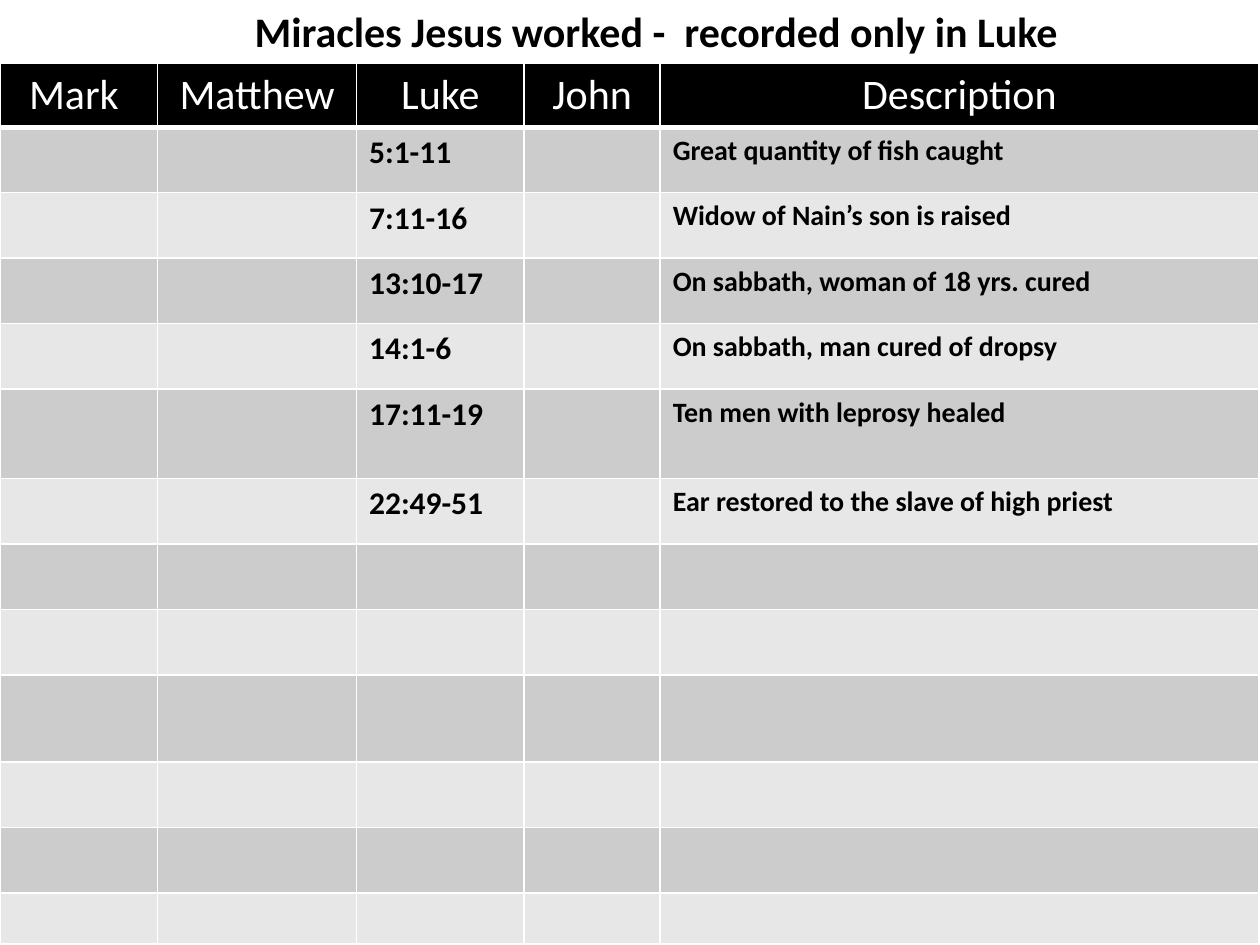
from dataclasses import dataclass

from lxml.etree import SubElement
from pptx import Presentation
from pptx.dml.color import RGBColor
from pptx.enum.text import MSO_ANCHOR, MSO_AUTO_SIZE, PP_ALIGN
from pptx.oxml.ns import qn
from pptx.util import Inches, Pt

FONT = "Calibri"
BLACK, WHITE = "000000", "FFFFFF"
BANDS = ("E7E7E7", "CCCCCC")
HEADS = ("Mark ", "Matthew", "Luke", "John", "Description")
WIDTHS = (1.25, 1.58, 1.33, 1.08, 4.75)
HEIGHTS = (0.51, *[0.52] * 4, 0.71, *[0.52] * 3, 0.69, 0.52, 0.52, 0.4)


@dataclass
class Event:
    verse: str
    text: str


EVENTS = (
    Event("5:1-11", "Great quantity of fish caught"),
    Event("7:11-16", "Widow of Nain’s son is raised"),
    Event("13:10-17", "On sabbath, woman of 18 yrs. cured"),
    Event("14:1-6", "On sabbath, man cured of dropsy"),
    Event("17:11-19", "Ten men with leprosy healed"),
    Event("22:49-51", "Ear restored to the slave of high priest"),
)


def color(code: str) -> RGBColor:
    return RGBColor.from_string(code)


def write(frame, text: str, size: int, code: str = BLACK, bold: bool = True,
          align=PP_ALIGN.LEFT) -> None:
    para = frame.paragraphs[0]
    para.alignment = align
    run = para.add_run()
    run.text = text
    font = run.font
    font.name, font.size, font.bold = FONT, Pt(size), bold
    font.color.rgb = color(code)


def style(cell, code: str, base: int) -> None:
    props = cell._tc.get_or_add_tcPr()
    for side, width in (("L", 1), ("R", 1), ("T", 1), ("B", base)):
        line = SubElement(props, qn(f"a:ln{side}"), w=str(Pt(width)))
        fill = SubElement(line, qn("a:solidFill"))
        SubElement(fill, qn("a:srgbClr"), val=WHITE)
    cell.fill.solid()
    cell.fill.fore_color.rgb = color(code)


def add_grid(slide) -> None:
    grid = slide.shapes.add_table(len(HEIGHTS), len(WIDTHS), Inches(0), Inches(0.5),
                                  Inches(sum(WIDTHS)), Inches(sum(HEIGHTS))).table
    for col, width in zip(grid.columns, WIDTHS):
        col.width = Inches(width)
    for num, (row, height) in enumerate(zip(grid.rows, HEIGHTS)):
        row.height = Inches(height)
        for cell in row.cells:
            style(cell, BANDS[num % 2] if num else BLACK, 1 if num else 3)
    for col, head in enumerate(HEADS):
        write(grid.cell(0, col).text_frame, head, 24, WHITE, False, PP_ALIGN.CENTER)
    for num, event in enumerate(EVENTS, 1):
        write(grid.cell(num, 2).text_frame, event.verse, 18)
        write(grid.cell(num, 4).text_frame, event.text, 16)


def add_title(slide) -> None:
    title = slide.shapes.title
    title.left, title.top = Inches(1.92), Inches(-0.01)
    title.width, title.height = Inches(6.82), Inches(0.5)
    frame = title.text_frame
    frame.word_wrap = False
    frame.auto_size = MSO_AUTO_SIZE.SHAPE_TO_FIT_TEXT
    frame.vertical_anchor = MSO_ANCHOR.TOP
    write(frame, "Miracles Jesus worked -  recorded only in Luke", 24)


def main() -> None:
    deck = Presentation()
    deck.slide_width, deck.slide_height = Inches(10), Inches(7.5)
    slide = deck.slides.add_slide(deck.slide_layouts[5])
    add_grid(slide)
    add_title(slide)
    deck.save("out.pptx")


if __name__ == "__main__":
    main()
